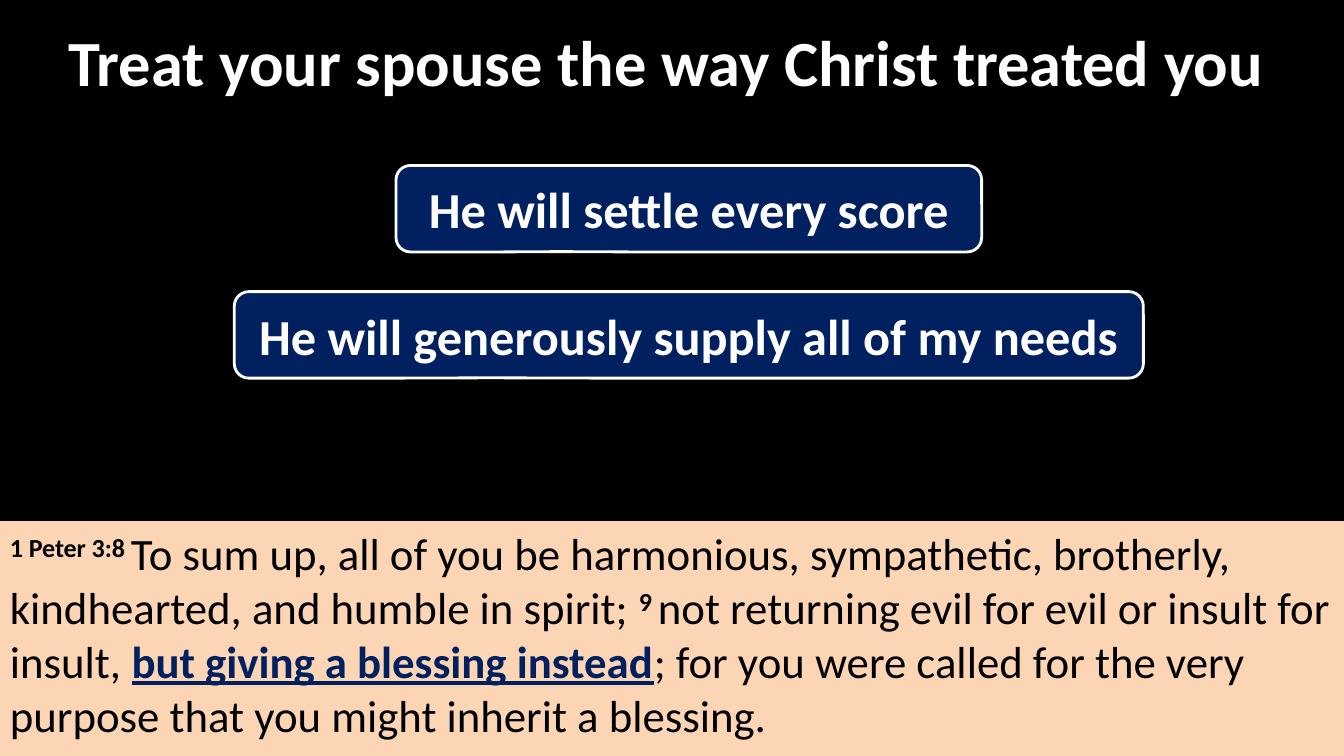
from pptx import Presentation
from pptx.dml.color import RGBColor
from pptx.enum.shapes import MSO_SHAPE
from pptx.enum.text import MSO_ANCHOR, PP_ALIGN
from pptx.util import Cm, Pt

BLACK = RGBColor(0x00, 0x00, 0x00)
WHITE = RGBColor(0xFF, 0xFF, 0xFF)
NAVY = RGBColor(0x00, 0x20, 0x60)
PEACH = RGBColor(0xFC, 0xD5, 0xB5)

SLIDE_WIDTH, SLIDE_HEIGHT = 33.87, 19.05
PASSAGE_TOP = 13.13
PROMISE_CENTER, PROMISE_TOP = 17.36, 4.17
PROMISE_HEIGHT, PROMISE_STEP = 2.18, 3.18

PROMISES = [
    ("He will settle every score", 14.76),
    ("He will generously supply all of my needs", 22.91),
]

# Each part of the passage: text and its style
PASSAGE = [
    ("1 Peter 3:8 ", "verse"),
    ("To sum up, all of you be harmonious, sympathetic, brotherly, "
     "kindhearted, and humble in spirit; ", "plain"),
    ("9 ", "verse"),
    ("not returning evil for evil or insult for insult, ", "plain"),
    ("but giving a blessing instead", "key"),
    ("; for you were called for the very purpose that you might "
     "inherit a blessing.", "plain"),
]


def add_run(paragraph, text, size, color, bold=False):
    run = paragraph.add_run()
    run.text = text
    run.font.name = "Calibri"
    run.font.size = Pt(size)
    run.font.bold = bold
    run.font.color.rgb = color
    return run


def add_title(slide, text):
    title = slide.shapes.add_textbox(Cm(1.47), Cm(0.2), Cm(30.91), Cm(2.67))
    frame = title.text_frame
    frame.word_wrap = True
    frame.vertical_anchor = MSO_ANCHOR.MIDDLE
    add_run(frame.paragraphs[0], text, 46, WHITE, bold=True)


def add_filled_shape(slide, preset, left, top, width, height, fill, anchor, align):
    shape = slide.shapes.add_shape(preset, Cm(left), Cm(top), Cm(width), Cm(height))
    shape.shadow.inherit = False
    shape.fill.solid()
    shape.fill.fore_color.rgb = fill
    shape.line.fill.background()
    shape.text_frame.word_wrap = True
    shape.text_frame.vertical_anchor = anchor
    shape.text_frame.paragraphs[0].alignment = align
    return shape


def add_passage(slide):
    passage = add_filled_shape(
        slide, MSO_SHAPE.RECTANGLE, 0, PASSAGE_TOP, SLIDE_WIDTH,
        SLIDE_HEIGHT - PASSAGE_TOP, PEACH, MSO_ANCHOR.TOP, PP_ALIGN.LEFT)
    for text, style in PASSAGE:
        color = NAVY if style == "key" else BLACK
        run = add_run(passage.text_frame.paragraphs[0], text, 32, color,
                      bold=style != "plain")
        if style == "key":
            run.font.underline = True
        elif style == "verse":
            # Raised verse number
            run.font._element.set("baseline", "30000")


def add_promise(slide, text, top, width):
    promise = add_filled_shape(
        slide, MSO_SHAPE.ROUNDED_RECTANGULAR_CALLOUT, PROMISE_CENTER - width / 2,
        top, width, PROMISE_HEIGHT, NAVY, MSO_ANCHOR.MIDDLE, PP_ALIGN.CENTER)
    # Callout tip rests on the bottom edge
    for index, value in enumerate((-0.219, 0.496, 0.167)):
        promise.adjustments[index] = value
    promise.line.color.rgb = WHITE
    promise.line.width = Pt(2)
    add_run(promise.text_frame.paragraphs[0], text, 36, WHITE, bold=True)


def main():
    deck = Presentation()
    deck.slide_width, deck.slide_height = Cm(SLIDE_WIDTH), Cm(SLIDE_HEIGHT)
    slide = deck.slides.add_slide(deck.slide_layouts[6])
    slide.background.fill.solid()
    slide.background.fill.fore_color.rgb = BLACK

    add_title(slide, "Treat your spouse the way Christ treated you")
    add_passage(slide)
    for row, (text, width) in enumerate(PROMISES):
        add_promise(slide, text, PROMISE_TOP + row * PROMISE_STEP, width)

    deck.save("out.pptx")


if __name__ == "__main__":
    main()
